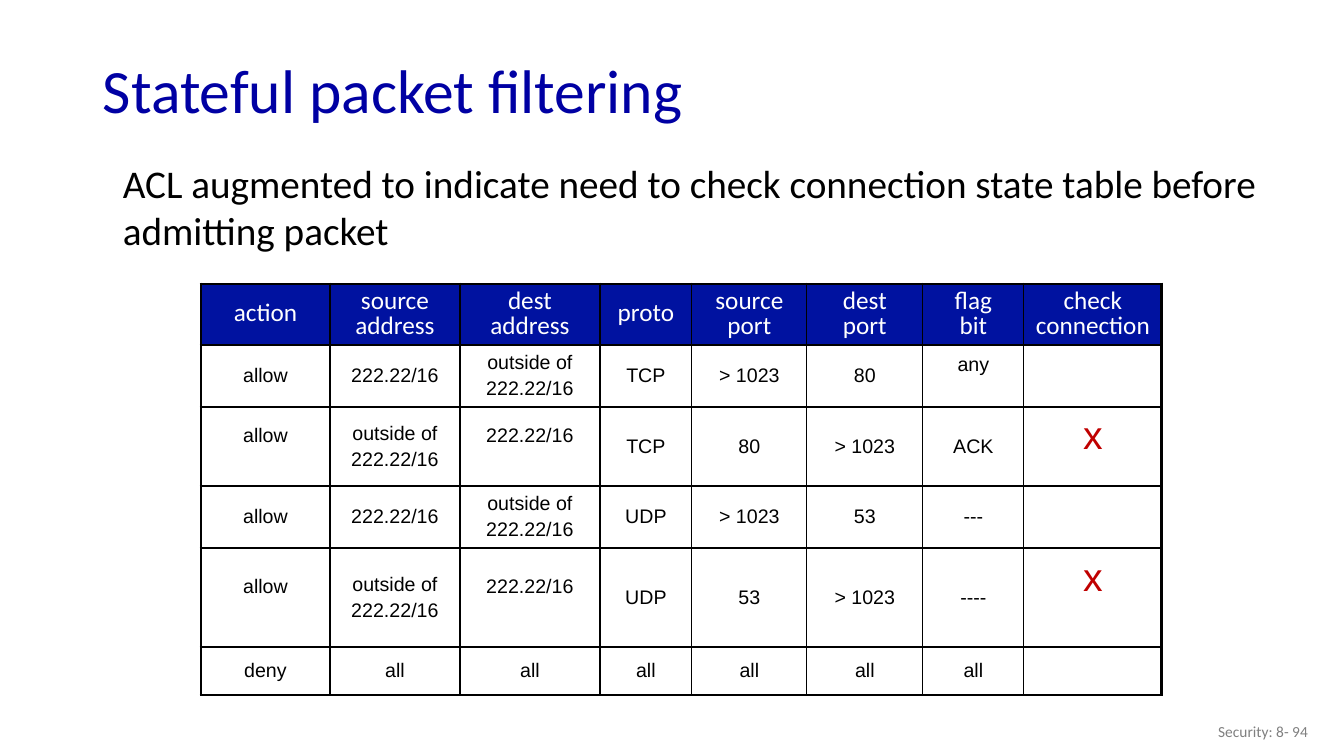
import lxml.etree
import pptx
import pptx.dml.color
import pptx.enum.text
import pptx.oxml.ns
import pptx.util

EMU_PER_PX = 914400 / 100.8
ALIGN = pptx.enum.text.PP_ALIGN
MIDDLE = pptx.enum.text.MSO_ANCHOR.MIDDLE
TOP = pptx.enum.text.MSO_ANCHOR.TOP

COLUMN_WIDTHS = [129, 130, 140, 92, 115, 116, 101, 138]
ROW_HEIGHTS = [61, 62, 79, 62, 99, 48]
RULES = [
    ["action", "source\naddress", "dest\naddress", "proto",
     "source\nport", "dest\nport", "flag\nbit", "check connection"],
    ["allow", "222.22/16", "outside of\n222.22/16", "TCP", "> 1023", "80", "any", ""],
    ["allow", "outside of\n222.22/16", "222.22/16", "TCP", "80", "> 1023", "ACK", "x"],
    ["allow", "222.22/16", "outside of\n222.22/16", "UDP", "> 1023", "53", "---", ""],
    ["allow", "outside of\n222.22/16", "222.22/16", "UDP", "53", "> 1023", "----", "x"],
    ["deny"] + ["all"] * 6 + [""],
]
RAISED_BY = {(1, 6): 11, (2, 0): 11, (2, 2): 11, (2, 7): 11,
             (4, 0): 11, (4, 2): 11, (4, 7): 20}


def px(length):
    return pptx.util.Emu(round(length * EMU_PER_PX))


def color(value):
    return pptx.dml.color.RGBColor.from_string(value)


class SlideBuilder:
    """Holds the style and the current slide, and adds elements to it."""

    heading_font = "Calibri"
    body_font = "Arial"
    black = "000000"
    white = "FFFFFF"
    title_blue = "0000A3"
    header_blue = "0012A0"
    mark_red = "C00000"
    footer_gray = "808080"

    def __init__(self, presentation):
        self.slide = presentation.slides.add_slide(presentation.slide_layouts[6])

    def style(self, frame, size, ink, font, align, line=1.0, before=0):
        for paragraph in frame.paragraphs:
            paragraph.alignment = align
            paragraph.line_spacing = line
            paragraph.space_before = pptx.util.Pt(before)
            paragraph.font.size = pptx.util.Pt(size)
            paragraph.font.name = font
            paragraph.font.color.rgb = color(ink)

    def text(self, words, box, size, ink, align=ALIGN.LEFT, anchor=MIDDLE, **spacing):
        frame = self.slide.shapes.add_textbox(*map(px, box)).text_frame
        frame.word_wrap = True
        frame.vertical_anchor = anchor
        frame.text = words
        self.style(frame, size, ink, self.heading_font, align, **spacing)

    def border(self, cell, side, points):
        properties = cell._tc.get_or_add_tcPr()
        line = lxml.etree.SubElement(properties, pptx.oxml.ns.qn(f"a:ln{side}"),
                                     w=str(pptx.util.Pt(points)))
        fill = lxml.etree.SubElement(line, pptx.oxml.ns.qn("a:solidFill"))
        lxml.etree.SubElement(fill, pptx.oxml.ns.qn("a:srgbClr"), val=self.black)

    def cell(self, cell, words, is_header, raised_by):
        cell.text = words
        cell.vertical_anchor = MIDDLE
        cell.margin_left = cell.margin_right = px(10)
        cell.margin_top = px(0 if raised_by else 5)
        cell.margin_bottom = px(2 * raised_by or 5)
        cell.fill.solid()
        cell.fill.fore_color.rgb = color(self.header_blue if is_header else self.white)
        if is_header:
            self.style(cell.text_frame, 18, self.white, self.heading_font,
                       ALIGN.CENTER, line=0.8)
        else:
            size, ink = (28, self.mark_red) if words == "x" else (14, self.black)
            self.style(cell.text_frame, size, ink, self.body_font,
                       ALIGN.CENTER, before=size * 0.2)

    def table(self, left, top, widths, heights, rows, raised):
        box = (left, top, sum(widths), sum(heights))
        table = self.slide.shapes.add_table(len(heights), len(widths),
                                            *map(px, box)).table
        table.first_row = table.horz_banding = False
        for column, width in zip(table.columns, widths):
            column.width = px(width)
        last_row, last_column = len(heights) - 1, len(widths) - 1
        for i, words_in_row in enumerate(rows):
            table.rows[i].height = px(heights[i])
            for j, words in enumerate(words_in_row):
                cell = table.cell(i, j)
                outer_sides = {"L": j == 0, "R": j == last_column,
                               "T": i == 0, "B": i == last_row}
                for side, is_outer in outer_sides.items():
                    self.border(cell, side, 2.25 if is_outer else 1)
                self.cell(cell, words, i == 0, raised.get((i, j), 0))


def main():
    presentation = pptx.Presentation()
    presentation.slide_width = px(1344)
    presentation.slide_height = px(756)
    builder = SlideBuilder(presentation)
    builder.text("Security: 8- 94", (1016, 711, 302, 40), 11,
                 builder.footer_gray, align=ALIGN.RIGHT)
    builder.text("Stateful packet filtering", (93, 44, 1159, 99), 44,
                 builder.title_blue, line=0.9)
    builder.table(201, 284, COLUMN_WIDTHS, ROW_HEIGHTS, RULES, RAISED_BY)
    builder.text("ACL augmented to indicate need to check connection state table "
                 "before admitting packet", (113, 154, 1205, 122), 28,
                 builder.black, anchor=TOP, before=5.6)
    presentation.save("out.pptx")


if __name__ == "__main__":
    main()
